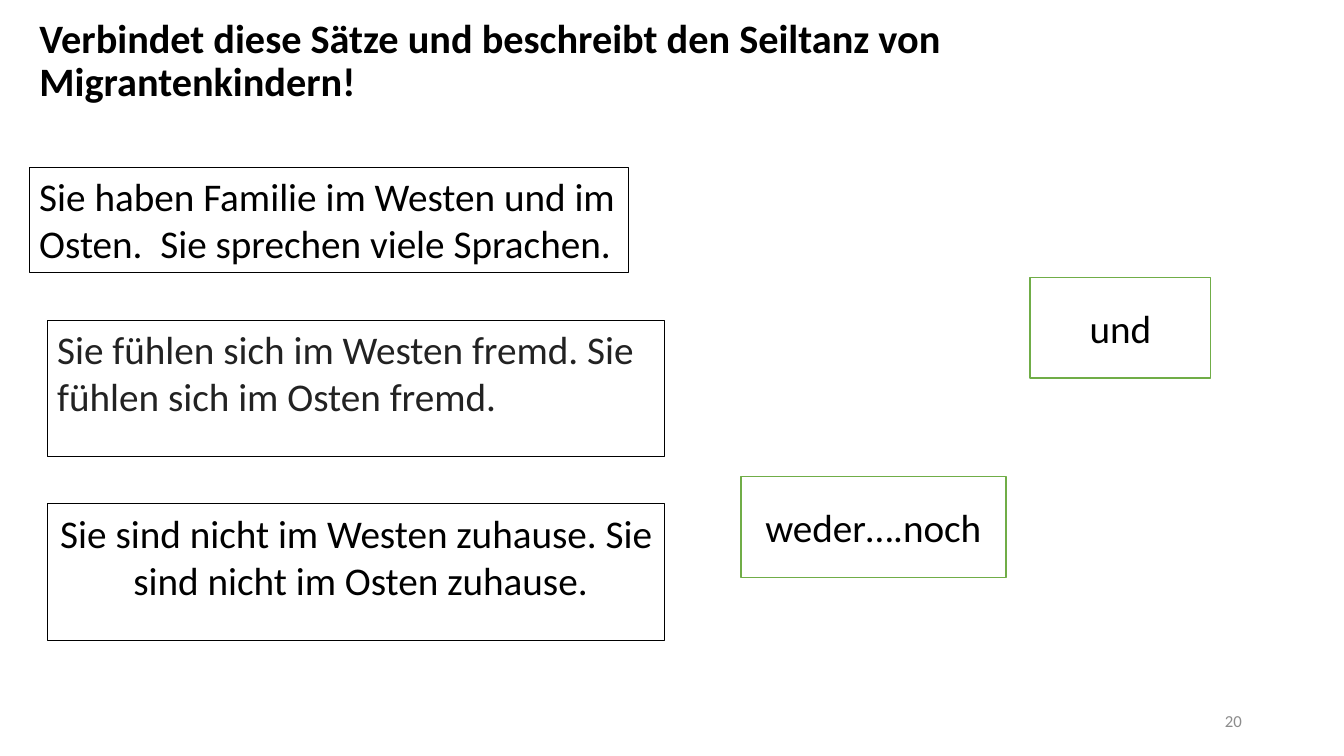
from dataclasses import dataclass

from pptx import Presentation
from pptx.dml.color import RGBColor
from pptx.enum import shapes, text
from pptx.util import Cm, Pt

FONT = "Calibri"
TOP, MIDDLE = text.MSO_ANCHOR.TOP, text.MSO_ANCHOR.MIDDLE
LEFT, CENTER, RIGHT = text.PP_ALIGN.LEFT, text.PP_ALIGN.CENTER, text.PP_ALIGN.RIGHT
BLACK, GREEN, WHITE = "000000", "70AD47", "FFFFFF"


@dataclass
class Card:
    """A framed sentence or conjunction; lengths in centimetres."""
    wording: str
    left: float
    top: float
    width: float
    height: float
    align: int = LEFT
    anchor: int = TOP
    ink: str = BLACK
    border: str = BLACK
    border_width: float = 0.75
    fill: str = ""


def conjunction(wording: str, left: float, top: float, width: float) -> Card:
    return Card(wording, left, top, width, 2.54, CENTER, MIDDLE,
                border=GREEN, border_width=1, fill=WHITE)


CARDS = [
    Card("Sie haben Familie im Westen und im Osten.  Sie sprechen viele Sprachen.",
         0.74, 4.22, 15.11, 2.64),
    Card("Sie sind nicht im Westen zuhause. Sie  sind nicht im Osten zuhause.",
         1.19, 12.7, 15.57, 3.43, align=CENTER),
    conjunction("weder….noch", 18.67, 12.01, 6.68),
    conjunction("und", 25.96, 6.99, 4.55),
    Card("Sie fühlen sich im Westen fremd. Sie fühlen sich im Osten fremd.",
         1.19, 8.08, 15.57, 3.43, ink="222222"),
]


def colour(code: str) -> RGBColor:
    return RGBColor.from_string(code)


def place(box, left: float, top: float, width: float, height: float) -> None:
    box.left, box.top, box.width, box.height = map(Cm, (left, top, width, height))


def write(box, wording: str, size: float, ink: str, align: int, anchor: int):
    """Fill the box with one formatted paragraph and return that paragraph."""
    frame = box.text_frame
    frame.word_wrap = True
    frame.auto_size = text.MSO_AUTO_SIZE.NONE
    frame.vertical_anchor = anchor
    para = frame.paragraphs[0]
    para.text = wording
    para.alignment = align
    para.font.name = FONT
    para.font.size = Pt(size)
    para.font.color.rgb = colour(ink)
    return para


def draw_card(page, card: Card) -> None:
    box = page.shapes.add_shape(
        shapes.MSO_SHAPE.RECTANGLE,
        *map(Cm, (card.left, card.top, card.width, card.height)))
    box.shadow.inherit = False
    if card.fill:
        box.fill.solid()
        box.fill.fore_color.rgb = colour(card.fill)
    else:
        box.fill.background()
    box.line.color.rgb = colour(card.border)
    box.line.width = Pt(card.border_width)
    write(box, card.wording, 28, card.ink, card.align, card.anchor)


def main() -> None:
    deck = Presentation()
    deck.slide_width, deck.slide_height = Cm(33.87), Cm(19.05)
    page = deck.slides.add_slide(deck.slide_layouts.get_by_name("Title Only"))

    title = page.shapes.title
    place(title, 0.74, 0.64, 29.03, 1.85)
    heading = write(
        title, "Verbindet diese Sätze und beschreibt den Seiltanz von Migrantenkindern!",
        28.8, BLACK, LEFT, MIDDLE)
    heading.font.bold = True
    heading.line_spacing = 0.9

    number = page.shapes.add_textbox(Cm(23.93), Cm(17.65), Cm(7.62), Cm(1.02))
    write(number, "20", 12, "8C8C8C", RIGHT, MIDDLE)

    for card in CARDS:
        draw_card(page, card)

    deck.save("out.pptx")


if __name__ == "__main__":
    main()
